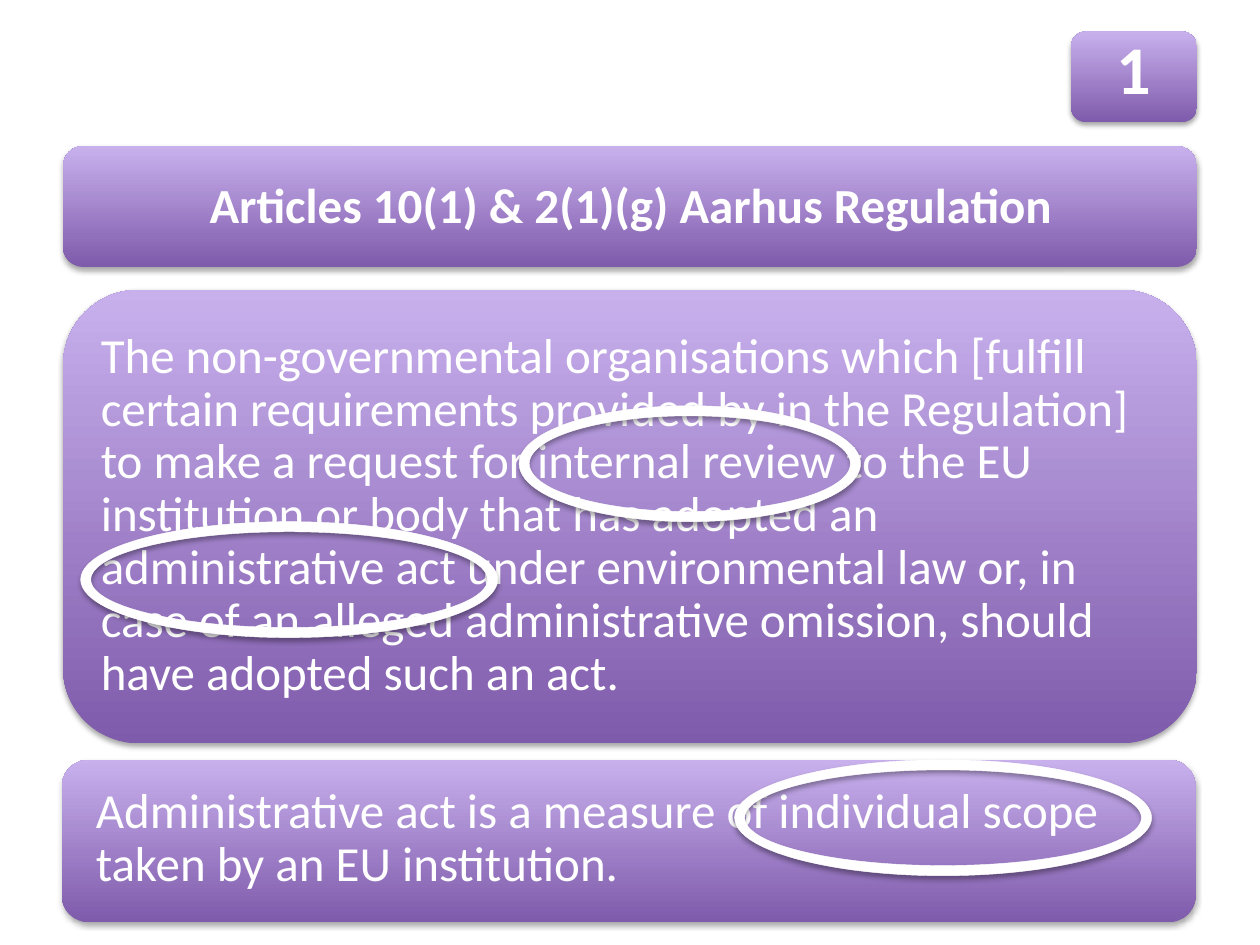
import pptx
import pptx.util
import pptx.dml.color
import pptx.enum.shapes
import pptx.enum.text
import pptx.oxml
import pptx.oxml.ns

Inches = pptx.util.Inches
Pt = pptx.util.Pt
KIND = pptx.enum.shapes.MSO_SHAPE
ALIGN = pptx.enum.text.PP_ALIGN

WHITE, DARK, LIGHT = "FFFFFF", "7F5BAB", "C8B0ED"
TITLE = "Articles 10(1) & 2(1)(g) Aarhus Regulation"
RULE = (
    "The non-governmental organisations which [fulfill certain requirements "
    "provided by in the Regulation] to make a request for internal review to "
    "the EU institution or body that has adopted an administrative act under "
    "environmental law or, in case of an alleged administrative omission, "
    "should have adopted such an act."
)
SCOPE = (
    "Administrative act is a measure of individual scope taken by an EU "
    "institution."
)


def color(code):
    return pptx.dml.color.RGBColor.from_string(code)


def add_shadow(shape):
    shape.shadow.inherit = False
    effects = shape._element.spPr.find(pptx.oxml.ns.qn("a:effectLst"))
    effects.append(pptx.oxml.parse_xml(
        f'<a:outerShdw {pptx.oxml.ns.nsdecls("a")} blurRad="{Pt(3.1)}" '
        f'dist="{Pt(1.8)}" dir="5400000" rotWithShape="0">'
        '<a:srgbClr val="000000"><a:alpha val="35000"/></a:srgbClr>'
        '</a:outerShdw>'
    ))


def add_text(shapes, box, text, size=28, bold=False, align=ALIGN.LEFT, inset=0.12):
    frame = shapes.add_textbox(*map(Inches, box)).text_frame
    frame.word_wrap = True
    frame.vertical_anchor = pptx.enum.text.MSO_ANCHOR.MIDDLE
    frame.margin_left = frame.margin_right = Inches(inset)
    frame.margin_top = frame.margin_bottom = Inches(inset)
    para = frame.paragraphs[0]
    para.alignment = align
    para.line_spacing = 0.9
    para.space_after = Pt(0.35 * size)
    run = para.add_run()
    run.text = text
    run.font.name = "Calibri"
    run.font.size = Pt(size)
    run.font.bold = bold
    run.font.color.rgb = color(WHITE)


def add_panel(slide, box, pads, text, **style):
    """Group a purple panel with its text; pads are left, top, right, bottom."""
    left, top, width, height = box
    west, north, east, south = pads
    shapes = slide.shapes.add_group_shape().shapes
    panel = shapes.add_shape(KIND.ROUNDED_RECTANGLE, *map(Inches, box))
    panel.fill.gradient()
    panel.fill.gradient_angle = 90
    for stop, code in zip(panel.fill.gradient_stops, (DARK, LIGHT)):
        stop.color.rgb = color(code)
    panel.line.fill.background()
    add_shadow(panel)
    inner = (left + west, top + north, width - west - east, height - north - south)
    add_text(shapes, inner, text, **style)


def add_ring(slide, left, top, width):
    ring = slide.shapes.add_shape(
        KIND.DONUT, Inches(left), Inches(top), Inches(width), Inches(0.92))
    ring.adjustments[0] = 0.087
    ring.fill.solid()
    ring.fill.fore_color.rgb = color(WHITE)
    ring.line.color.rgb = color(WHITE)
    ring.line.width = Pt(0.25)
    add_shadow(ring)


def main():
    deck = pptx.Presentation()
    deck.slide_width, deck.slide_height = Inches(10), Inches(7.5)
    slide = deck.slides.add_slide(deck.slide_layouts[6])

    add_panel(slide, (0.5, 1.16, 9, 0.96), (0.05, 0.05, 0.04, 0.04), TITLE,
              bold=True, align=ALIGN.CENTER)
    add_panel(slide, (0.5, 2.3, 9, 3.6), (0.18, 0.17, 0.17, 0.18), RULE)
    add_panel(slide, (8.5, 0.25, 1, 0.72), (0.08, 0, 0.09, 0.07), "1",
              size=39, bold=True, align=ALIGN.CENTER, inset=0.16)
    add_ring(slide, 4.12, 3.22, 2.71)
    add_ring(slide, 0.64, 4.14, 3.31)
    add_panel(slide, (0.49, 6.03, 9, 1.29), (0.15, 0.21, 0.16, 0.24), SCOPE)
    add_ring(slide, 5.83, 6.03, 3.31)

    deck.save("out.pptx")


if __name__ == "__main__":
    main()
